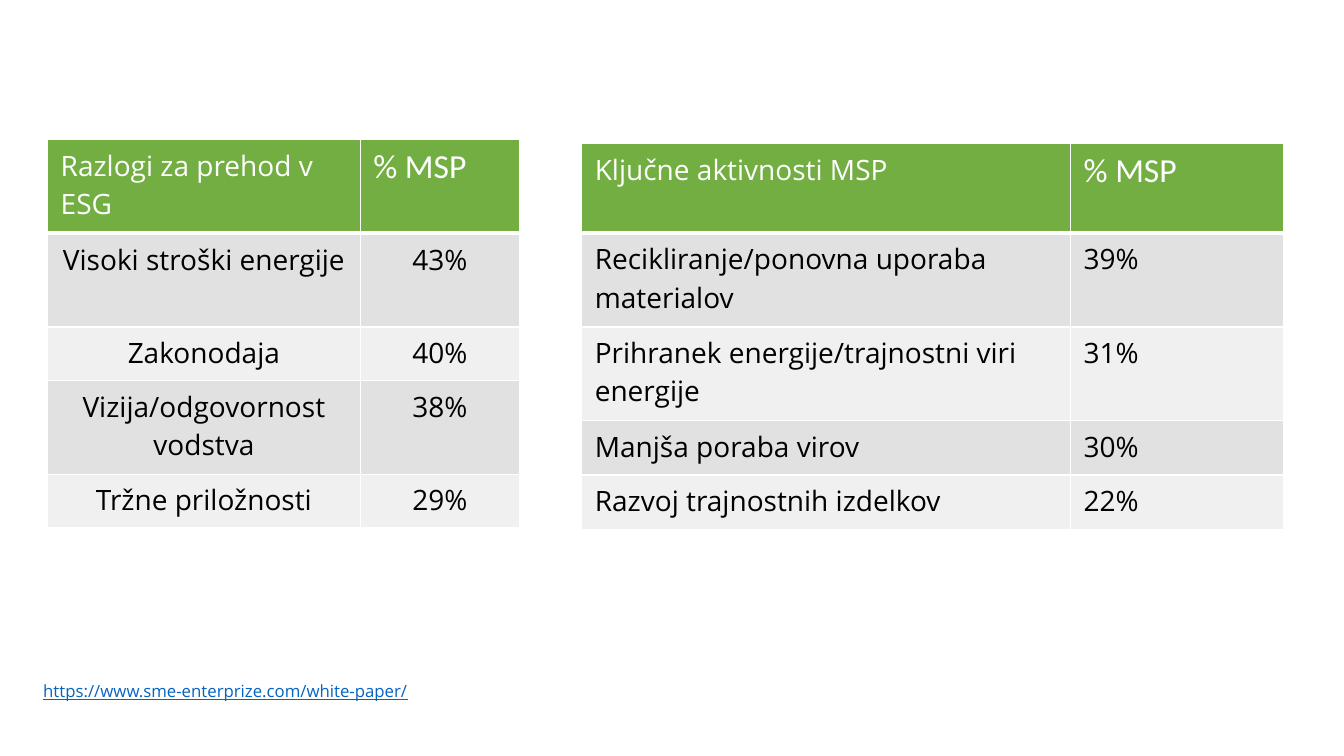
"""Build a slide with two tables on ESG reasons and activities of small firms."""
from lxml.etree import SubElement
from pptx import Presentation
from pptx.dml.color import RGBColor
from pptx.enum.text import PP_ALIGN as Align
from pptx.oxml.ns import qn
from pptx.util import Cm, Pt

GREEN = RGBColor(0x72, 0xAE, 0x42)
DARK_BAND = RGBColor(0xE1, 0xE1, 0xE1)
LIGHT_BAND = RGBColor(0xF0, 0xF0, 0xF0)
WHITE = RGBColor(0xFF, 0xFF, 0xFF)
BLACK = RGBColor(0, 0, 0)
LINK_BLUE = RGBColor(0x05, 0x63, 0xC1)
BODY_FONT = "Open Sans"


def add_border(cell, side, points):
    line = SubElement(cell._tc.get_or_add_tcPr(), qn(f"a:ln{side}"), w=str(Pt(points)))
    fill = SubElement(line, qn("a:solidFill"))
    SubElement(fill, qn("a:srgbClr"), val=str(WHITE))


prs = Presentation()
prs.slide_width, prs.slide_height = Cm(33.87), Cm(19.05)
slide = prs.slides.add_slide(prs.slide_layouts[6])

reasons = [
    ("Razlogi za prehod v ESG", "% MSP"),
    ("Visoki stroški energije", "43%"),
    ("Zakonodaja", "40%"),
    ("Vizija/odgovornost vodstva", "38%"),
    ("Tržne priložnosti", "29%"),
]
activities = [
    ("Ključne aktivnosti MSP", "% MSP"),
    ("Recikliranje/ponovna uporaba materialov", "39%"),
    ("Prihranek energije/trajnostni viri energije", "31%"),
    ("Manjša poraba virov", "30%"),
    ("Razvoj trajnostnih izdelkov", "22%"),
]
panels = [
    (reasons, 1.2, 3.52, (7.88, 4.01), (2.36, 2.36, 1.35, 2.36, 1.35), Align.CENTER),
    (activities, 14.66, 3.62, (12.32, 5.36), (2.26, 2.36, 2.36, 1.37, 1.37), Align.LEFT),
]

for entries, left, top, widths, heights, body_align in panels:
    table = slide.shapes.add_table(
        len(entries), len(widths), Cm(left), Cm(top), Cm(sum(widths)), Cm(sum(heights))
    ).table
    for column, width in zip(table.columns, widths):
        column.width = Cm(width)
    for r, (entry, height) in enumerate(zip(entries, heights)):
        table.rows[r].height = Cm(height)
        header = r == 0
        for c, wording in enumerate(entry):
            cell = table.cell(r, c)
            cell.margin_left = cell.margin_right = Cm(0.33)
            cell.margin_top = cell.margin_bottom = Cm(0.17)
            for side in "LRTB":
                add_border(cell, side, 3 if header and side == "B" else 1)
            cell.fill.solid()
            cell.fill.fore_color.rgb = GREEN if header else DARK_BAND if r % 2 else LIGHT_BAND
            cell.text = wording
            paragraph = cell.text_frame.paragraphs[0]
            paragraph.alignment = Align.LEFT if header else body_align
            share_header = header and c == 1
            paragraph.font.name = "Calibri" if share_header else BODY_FONT
            paragraph.font.size = Pt(24 if share_header else 20)
            paragraph.font.bold = False
            paragraph.font.color.rgb = WHITE if header else BLACK

source = slide.shapes.add_textbox(Cm(0.84), Cm(17.02), Cm(21.77), Cm(1.27)).text_frame
source.word_wrap = True
source.text = "https://www.sme-enterprize.com/white-paper/"
address = source.paragraphs[0].font
address.name = BODY_FONT
address.size = Pt(12)
address.underline = True
address.color.rgb = LINK_BLUE

prs.save("out.pptx")
